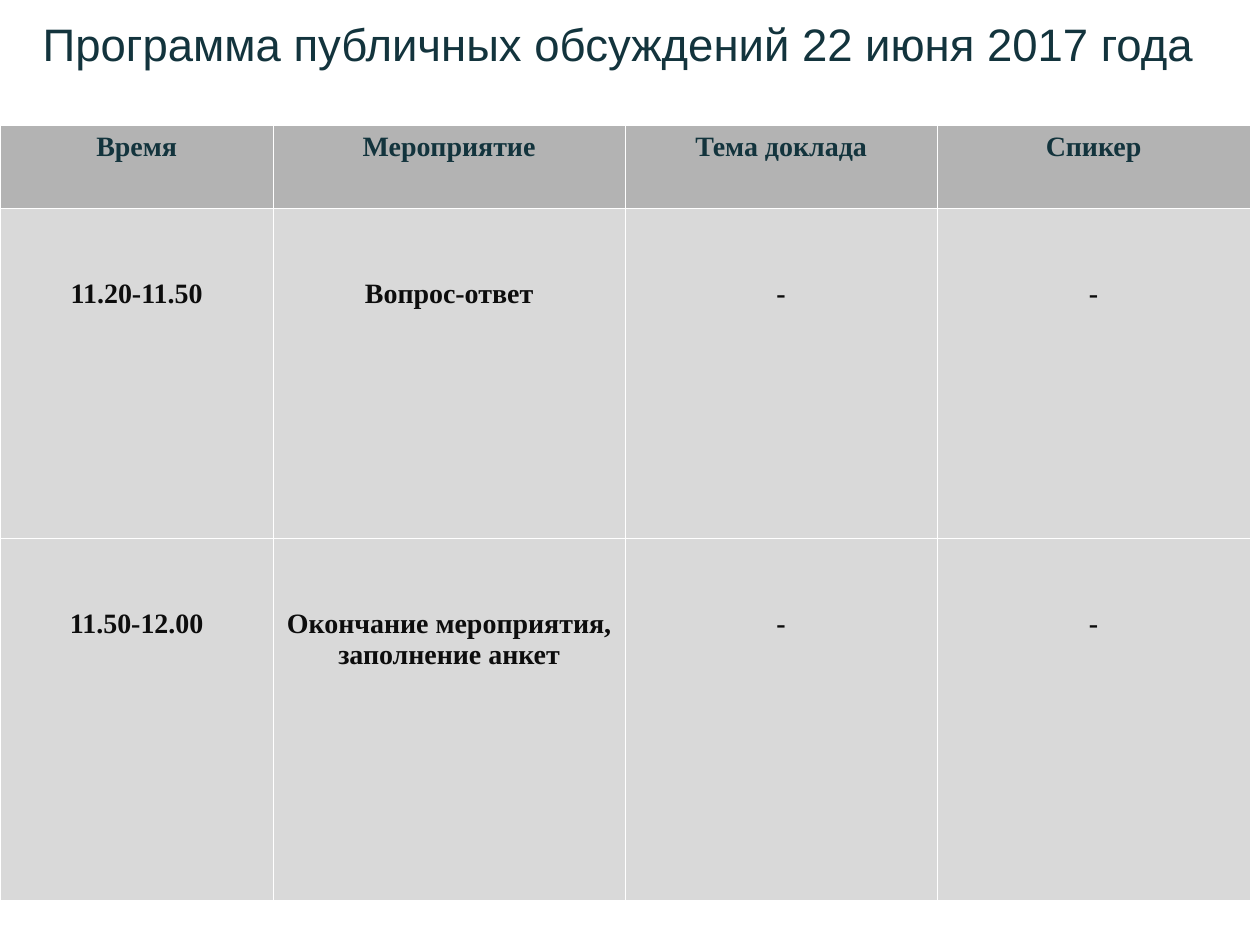
"""Build the programme slide of the public discussions."""
from dataclasses import dataclass

from lxml.etree import SubElement
from pptx import Presentation
from pptx.dml.color import RGBColor
from pptx.enum.text import PP_ALIGN
from pptx.oxml.ns import qn
from pptx.util import Inches, Pt

COLORS = {
    "title": "13343D",
    "body": "0D0D0D",
    "header_fill": "B3B3B3",
    "body_fill": "D9D9D9",
    "border": "FFFFFF",
}
WIDTH, HEIGHT = Inches(10), Inches(7.5)
COLUMN_PERCENTS = (21.7, 27.9, 24.8, 24.8)


@dataclass(frozen=True)
class CellStyle:
    fill: str
    color: str
    side: float
    top: float


@dataclass(frozen=True)
class ProgrammeRow:
    height_percent: float
    texts: tuple
    style: CellStyle


HEADER = CellStyle("header_fill", "title", 0.1, 0.05)
BODY = CellStyle("body_fill", "body", 0.04, 0.56)
ROWS = (
    ProgrammeRow(8.8, ("Время", "Мероприятие", "Тема доклада", "Спикер"), HEADER),
    ProgrammeRow(34.93, ("11.20-11.50", "Вопрос-ответ", "-", "-"), BODY),
    ProgrammeRow(
        38.27,
        ("11.50-12.00", "Окончание мероприятия, заполнение анкет", "-", "-"),
        BODY,
    ),
)


def across(percent: float) -> int:
    """Return a share of the slide width."""
    return round(WIDTH * percent / 100)


def down(percent: float) -> int:
    """Return a share of the slide height."""
    return round(HEIGHT * percent / 100)


def format_run(r, font: str, size: float, color: str, bold: bool = False) -> None:
    """Set the font of one run."""
    r.font.name = font
    r.font.size = Pt(size)
    r.font.bold = bold
    r.font.color.rgb = RGBColor.from_string(COLORS[color])


def draw_borders(cell) -> None:
    """Give a cell hairline borders, placed before its fill."""
    tc_pr = cell._tc.get_or_add_tcPr()
    for side in ("lnL", "lnR", "lnT", "lnB"):
        ln = SubElement(tc_pr, qn(f"a:{side}"), w=str(Pt(0.06)))
        fill = SubElement(ln, qn("a:solidFill"))
        SubElement(fill, qn("a:srgbClr"), val=COLORS["border"])


def draw_cell(cell, text: str, style: CellStyle) -> None:
    """Fill one table cell with styled, centred text."""
    draw_borders(cell)
    cell.fill.solid()
    cell.fill.fore_color.rgb = RGBColor.from_string(COLORS[style.fill])
    cell.margin_left = cell.margin_right = Inches(style.side)
    cell.margin_top, cell.margin_bottom = Inches(style.top), Inches(0.05)
    cell.text_frame.text = text
    p = cell.text_frame.paragraphs[0]
    p.alignment = PP_ALIGN.CENTER
    format_run(p.runs[0], "Times New Roman", 16, style.color, bold=True)


def draw_title(s, text: str) -> None:
    """Add the slide heading."""
    sp = s.shapes.add_textbox(across(2.4), down(1.07), across(96.8), down(10.5))
    tf = sp.text_frame
    tf.word_wrap = True
    tf.text = text
    format_run(tf.paragraphs[0].runs[0], "Arial", 26, "title")


def draw_programme(s, rows: tuple) -> None:
    """Add the programme table."""
    width = across(sum(COLUMN_PERCENTS))
    height = down(sum(row.height_percent for row in rows))
    table = s.shapes.add_table(
        len(rows), len(COLUMN_PERCENTS), 0, down(13.2), width, height
    ).table
    table.horz_banding = False
    for column, percent in zip(table.columns, COLUMN_PERCENTS):
        column.width = across(percent)
    for table_row, row in zip(table.rows, rows):
        table_row.height = down(row.height_percent)
        for cell, text in zip(table_row.cells, row.texts):
            draw_cell(cell, text, row.style)


def main() -> None:
    """Build and save the presentation."""
    prs = Presentation()
    prs.slide_width, prs.slide_height = WIDTH, HEIGHT
    s = prs.slides.add_slide(prs.slide_layouts[6])
    draw_title(s, "Программа публичных обсуждений 22 июня 2017 года")
    draw_programme(s, ROWS)
    prs.save("out.pptx")


if __name__ == "__main__":
    main()
